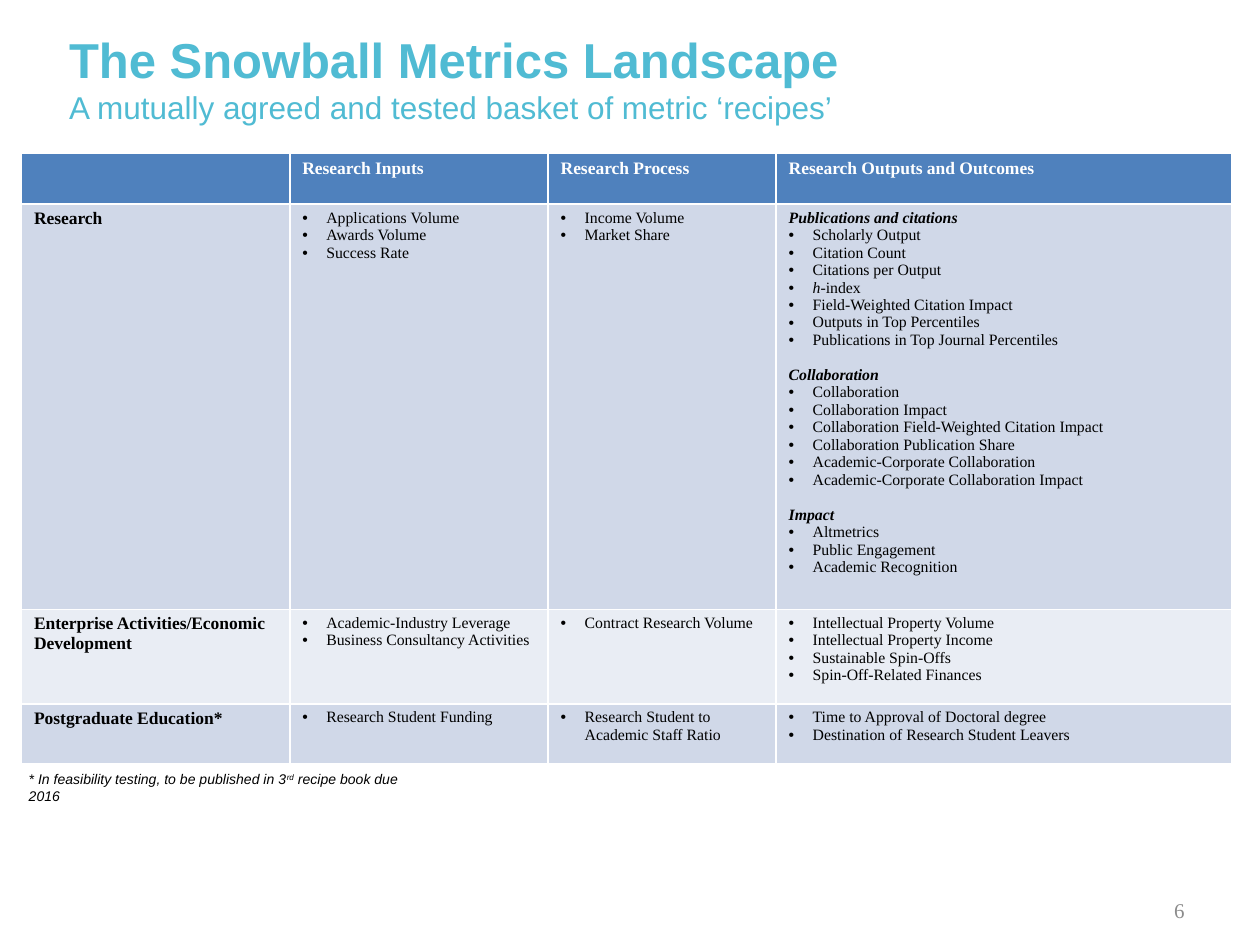
from lxml import etree
from pptx import Presentation
from pptx.dml.color import RGBColor
from pptx.enum.text import MSO_ANCHOR, PP_ALIGN
from pptx.oxml.ns import qn
from pptx.util import Inches, Pt

MIDDLE = MSO_ANCHOR.MIDDLE
RIGHT = PP_ALIGN.RIGHT

TEAL = RGBColor(0x50, 0xBB, 0xD3)
GREY = RGBColor(0x8C, 0x8C, 0x8C)
BLACK = RGBColor(0x00, 0x00, 0x00)
WHITE = RGBColor(0xFF, 0xFF, 0xFF)
HEADER_BLUE = RGBColor(0x4F, 0x81, 0xBD)
BAND_DARK = RGBColor(0xD0, 0xD8, 0xE8)
BAND_LIGHT = RGBColor(0xE9, 0xED, 0xF4)

GRID_COLUMNS, GRID_ROWS = 100, 75
UNIT = Inches(0.1)
HANG = Inches(0.19)

SERIF = {"name": "Times New Roman", "size": Pt(9), "bold": False, "color": BLACK}
LABEL = {**SERIF, "size": Pt(10), "bold": True}
HEADER = {**LABEL, "color": WHITE}
GROUP = {**SERIF, "bold": True, "italic": True}
TITLE = {"name": "Arial", "size": Pt(28), "bold": True, "color": TEAL}
SUBTITLE = {**TITLE, "size": Pt(18), "bold": False}
NOTE = {"name": "Arial", "size": Pt(8), "italic": True, "color": BLACK}
NUMBER = {**SERIF, "size": Pt(12), "color": GREY}

COLUMN_WIDTHS = (21.3, 20.5, 18.1, 36.2)
ROW_HEIGHTS = (4, 31, 7.5, 4.8)
HEADINGS = ("", "Research Inputs", "Research Process", "Research Outputs and Outcomes")
H_INDEX = "h-index"
METRICS = (
    ("Research", (
        {"": ("Applications Volume", "Awards Volume", "Success Rate")},
        {"": ("Income Volume", "Market Share")},
        {
            "Publications and citations": (
                "Scholarly Output", "Citation Count", "Citations per Output", H_INDEX,
                "Field-Weighted Citation Impact", "Outputs in Top Percentiles",
                "Publications in Top Journal Percentiles"),
            "Collaboration": (
                "Collaboration", "Collaboration Impact",
                "Collaboration Field-Weighted Citation Impact",
                "Collaboration Publication Share", "Academic-Corporate Collaboration",
                "Academic-Corporate Collaboration Impact"),
            "Impact": ("Altmetrics", "Public Engagement", "Academic Recognition"),
        },
    )),
    ("Enterprise Activities/Economic Development", (
        {"": ("Academic-Industry Leverage", "Business Consultancy Activities")},
        {"": ("Contract Research Volume",)},
        {"": ("Intellectual Property Volume", "Intellectual Property Income",
              "Sustainable Spin-Offs", "Spin-Off-Related Finances")},
    )),
    ("Postgraduate Education*", (
        {"": ("Research Student Funding",)},
        {"": ("Research Student to Academic Staff Ratio",)},
        {"": ("Time to Approval of Doctoral degree",
              "Destination of Research Student Leavers")},
    )),
)


def grid(*lengths):
    """Turn grid counts into slide lengths."""
    return [round(length * UNIT) for length in lengths]


def add_span(para, text, style):
    """Append a formatted run to a paragraph."""
    span = para.add_run()
    span.text = text
    for key, value in style.items():
        if key == "color":
            span.font.color.rgb = value
        else:
            setattr(span.font, key, value)
    return span


def add_text_box(page, box, anchor):
    """Place a wrapping text box and return its text frame."""
    frame = page.shapes.add_textbox(*grid(*box)).text_frame
    frame.word_wrap = True
    frame.vertical_anchor = anchor
    return frame


def add_bullet(para):
    """Give a paragraph a hanging bullet."""
    properties = para._p.get_or_add_pPr()
    for key, value in {"marL": HANG, "indent": -HANG}.items():
        properties.set(key, str(int(value)))
    etree.SubElement(properties, qn("a:buFont")).set("typeface", "Arial")
    etree.SubElement(properties, qn("a:buChar")).set("char", "•")


def fill_metrics(cell, groups):
    """Write headed groups of bulleted metrics into a cell."""
    frame = cell.text_frame
    lines = []
    for heading, metrics in groups.items():
        if heading:
            lines.append((heading, True))
        lines += [(metric, False) for metric in metrics]
    for index, (text, is_heading) in enumerate(lines):
        para = frame.add_paragraph() if index else frame.paragraphs[0]
        if is_heading:
            if index:
                para.space_before = Pt(10)
            add_span(para, text, GROUP)
            continue
        add_bullet(para)
        if text == H_INDEX:
            add_span(para, text[0], {**SERIF, "italic": True})
            text = text[1:]
        add_span(para, text, SERIF)


def add_metrics_table(page, box):
    """Build the table of metrics from its headings and rows."""
    table = page.shapes.add_table(len(ROW_HEIGHTS), len(COLUMN_WIDTHS), *grid(*box)).table
    for column, width in zip(table.columns, grid(*COLUMN_WIDTHS)):
        column.width = width
    for row, height in zip(table.rows, grid(*ROW_HEIGHTS)):
        row.height = height
    fills = (HEADER_BLUE, BAND_DARK, BAND_LIGHT, BAND_DARK)
    for row, color in zip(table.rows, fills):
        for cell in row.cells:
            cell.fill.solid()
            cell.fill.fore_color.rgb = color
            cell.margin_top = cell.margin_bottom = Inches(0.04)
    for cell, heading in zip(table.rows[0].cells, HEADINGS):
        if heading:
            add_span(cell.text_frame.paragraphs[0], heading, HEADER)
    for row_index, (label, cells) in enumerate(METRICS, start=1):
        add_span(table.cell(row_index, 0).text_frame.paragraphs[0], label, LABEL)
        for column_index, groups in enumerate(cells, start=1):
            fill_metrics(table.cell(row_index, column_index), groups)


def add_title(page, box):
    """Write the title with its subtitle on the next line."""
    para = add_text_box(page, box, MIDDLE).paragraphs[0]
    add_span(para, "The Snowball Metrics Landscape", TITLE)
    para.add_line_break()
    add_span(para, "A mutually agreed and tested basket of metric ‘recipes’", SUBTITLE)


def add_footnote(page, box):
    """Write the footnote with its raised ordinal."""
    para = add_text_box(page, box, MSO_ANCHOR.TOP).paragraphs[0]
    add_span(para, "* In feasibility testing, to be published in 3", NOTE)
    ordinal = add_span(para, "rd", NOTE)
    ordinal._r.get_or_add_rPr().set("baseline", "30000")
    add_span(para, " recipe book due 2016", NOTE)


def add_page_number(page, box):
    """Write the page number at the right."""
    para = add_text_box(page, box, MIDDLE).paragraphs[0]
    para.alignment = RIGHT
    add_span(para, "6", NUMBER)


def main():
    """Build and save the deck."""
    deck = Presentation()
    deck.slide_width, deck.slide_height = grid(GRID_COLUMNS, GRID_ROWS)
    page = deck.slides.add_slide(deck.slide_layouts[6])
    add_title(page, (4.5, 2.4, 64.2, 7.5))
    add_page_number(page, (80, 70.2, 15, 4))
    add_metrics_table(page, (1.7, 12.2, sum(COLUMN_WIDTHS), sum(ROW_HEIGHTS)))
    add_footnote(page, (1.3, 60.7, 31.7, 2.4))
    deck.save("out.pptx")


if __name__ == "__main__":
    main()
